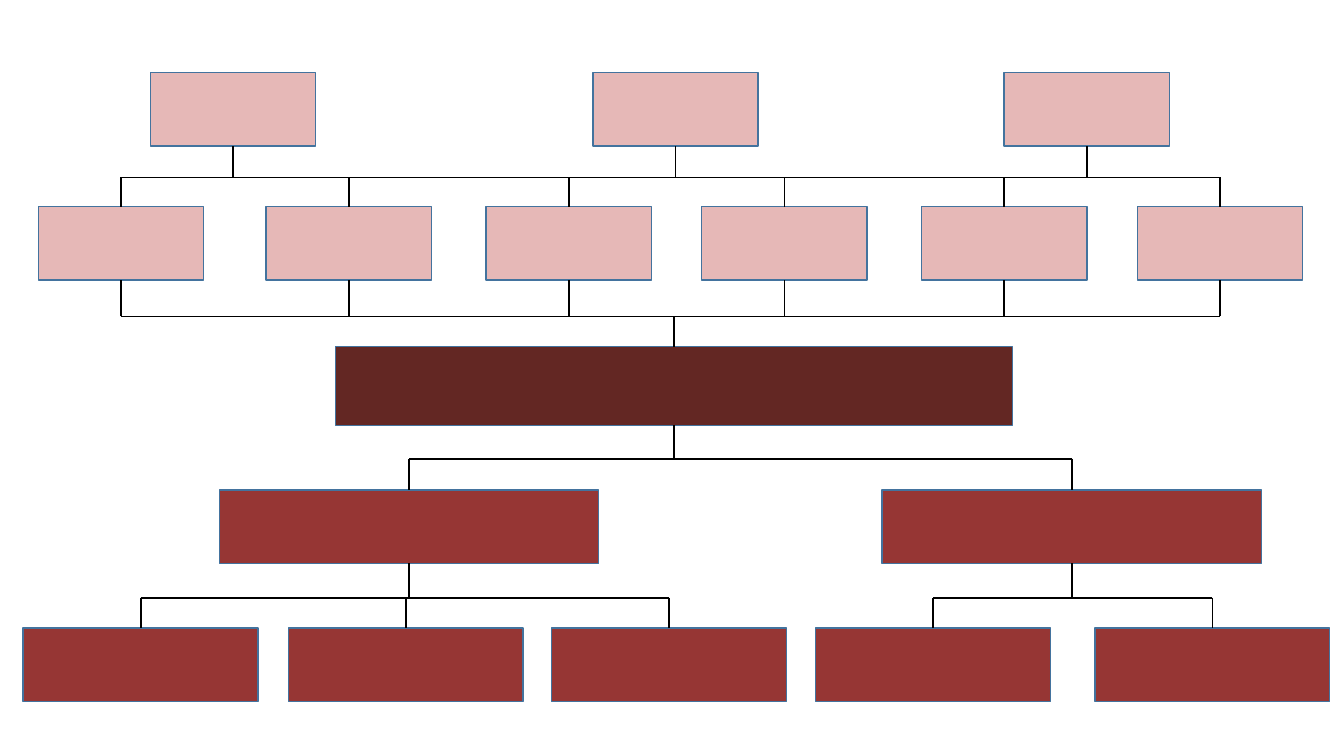
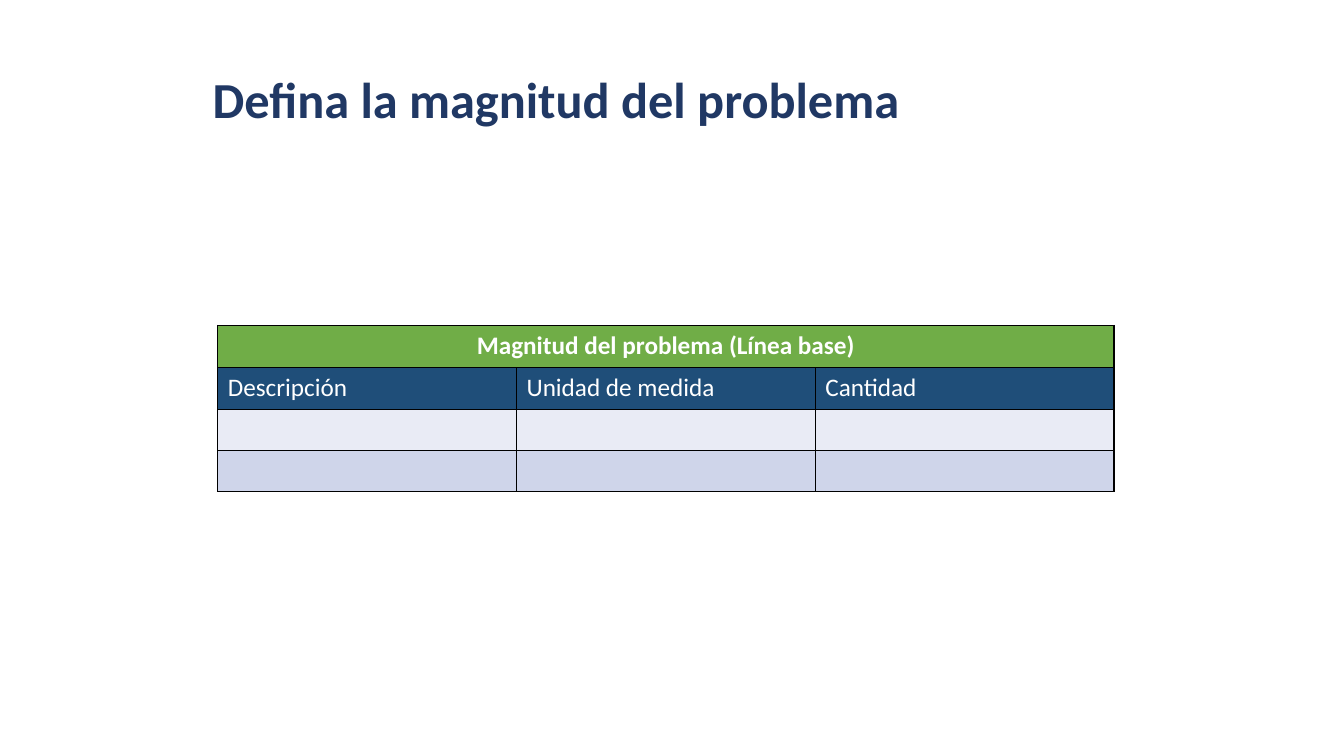
from lxml.etree import SubElement
from pptx import Presentation
from pptx.dml.color import RGBColor
from pptx.enum.shapes import MSO_CONNECTOR, MSO_SHAPE
from pptx.enum.text import PP_ALIGN
from pptx.oxml import parse_xml
from pptx.oxml.ns import nsdecls, qn
from pptx.util import Inches, Pt

BLACK = RGBColor(0x00, 0x00, 0x00)
WHITE = RGBColor(0xFF, 0xFF, 0xFF)
PINK = RGBColor(0xE6, 0xB8, 0xB7)
RED = RGBColor(0x96, 0x36, 0x34)
MAROON = RGBColor(0x63, 0x27, 0x23)
OUTLINE = RGBColor(0x43, 0x73, 0x9E)
NAVY = RGBColor(0x20, 0x38, 0x64)
GREEN = RGBColor(0x70, 0xAD, 0x47)
BLUE = RGBColor(0x1F, 0x4E, 0x79)
PALE = RGBColor(0xE9, 0xEB, 0xF5)
LILAC = RGBColor(0xCF, 0xD5, 0xEA)

FONT = "Calibri"
BOTTOM, TOP = 2, 0
UNIT = Inches(0.1)  # one column or row of the grid


def grid(*lengths):
    return [round(length * UNIT) for length in lengths]


class Deck:
    def __init__(self):
        self.prs = Presentation()
        self.prs.slide_width, self.prs.slide_height = Inches(13.33), Inches(7.5)
        self.slide = None

    def new_slide(self):
        self.slide = self.prs.slides.add_slide(self.prs.slide_layouts[6])

    def add_text(self, paragraph, text, size, color, bold=False):
        run = paragraph.add_run()
        run.text = text
        run.font.name, run.font.size, run.font.bold = FONT, Pt(size), bold
        run.font.color.rgb = color

    def title(self, text):
        frame = self.slide.shapes.add_textbox(*grid(20.1, 6.9, 91.1, 9.9)).text_frame
        frame.word_wrap = True
        frame.paragraphs[0].line_spacing = 0.9
        self.add_text(frame.paragraphs[0], text, 36, NAVY, bold=True)

    def level(self, centres, top, width, fill, height=7.3):
        """Draw a row of equal boxes, placed by their centre columns."""
        boxes = []
        for centre in centres:
            box = self.slide.shapes.add_shape(
                MSO_SHAPE.RECTANGLE, *grid(centre - width / 2, top, width, height))
            box.shadow.inherit = False
            box.fill.solid()
            box.fill.fore_color.rgb = fill
            box.line.color.rgb = OUTLINE
            box.line.width = Pt(1)
            boxes.append(box)
        return boxes

    def line(self, x1, y1, x2, y2):
        link = self.slide.shapes.add_connector(MSO_CONNECTOR.STRAIGHT, x1, y1, x2, y2)
        link.line.color.rgb = BLACK
        link.line.width = Pt(1.25)
        SubElement(link._element.spPr, qn("a:effectLst"))
        return link

    def join(self, upper, lower, row):
        """Link two levels of boxes through a horizontal line at the given row."""
        y, = grid(row)
        centres = [box.left + box.width // 2 for box in upper + lower]
        self.line(min(centres), y, max(centres), y)
        for box, x in zip(upper, centres):
            self.line(x, box.top + box.height, x, y).begin_connect(box, BOTTOM)
        for box, x in zip(lower, centres[len(upper):]):
            self.line(x, y, x, box.top).end_connect(box, TOP)

    def border(self, cell):
        props = cell._tc.get_or_add_tcPr()
        for index, side in enumerate("LRTB"):
            props.insert(index, parse_xml(
                f'<a:ln{side} {nsdecls("a")} w="{Pt(1)}"><a:solidFill>'
                f'<a:srgbClr val="{BLACK}"/></a:solidFill></a:ln{side}>'))

    def table(self, heading, labels, empty_fills):
        fills = [GREEN, BLUE, *empty_fills]
        table = self.slide.shapes.add_table(
            len(fills), len(labels), *grid(21.6, 32.3, 88.9, 16.5)).table
        table.first_row = table.horz_banding = False
        for row, fill, height in zip(table.rows, fills, grid(4.2, *[4.1] * 3)):
            row.height = height
            for cell in row.cells:
                cell.fill.solid()
                cell.fill.fore_color.rgb = fill
                self.border(cell)
        banner = table.cell(0, 0)
        banner.merge(table.cell(0, len(labels) - 1))
        paragraph = banner.text_frame.paragraphs[0]
        paragraph.alignment = PP_ALIGN.CENTER
        self.add_text(paragraph, heading, 18, WHITE, bold=True)
        for cell, label in zip(table.rows[1].cells, labels):
            self.add_text(cell.text_frame.paragraphs[0], label, 18, WHITE)


def problem_tree(deck):
    deck.new_slide()
    far_effects = deck.level([23.1, 67, 107.8], 7.2, 16.4, PINK)
    effects = deck.level([12, 34.6, 56.4, 77.8, 99.6, 121], 20.5, 16.4, PINK)
    problem = deck.level([66.85], 34.4, 67.1, MAROON, height=7.8)
    causes = deck.level([40.6, 106.3], 48.6, 37.6, RED)
    roots = deck.level([13.95, 40.25, 66.35, 92.55, 120.25], 62.3, 23.3, RED)

    deck.join(far_effects, effects, 17.6)
    deck.join(effects, problem, 31.4)
    deck.join(problem, causes, 45.5)
    deck.join(causes[:1], roots[:3], 59.3)
    deck.join(causes[1:], roots[3:], 59.3)


def problem_size(deck):
    deck.new_slide()
    deck.table("Magnitud del problema (Línea base)",
               ["Descripción", "Unidad de medida", "Cantidad"], [PALE, LILAC])
    deck.title("Defina la magnitud del problema")


def main():
    deck = Deck()
    problem_tree(deck)
    problem_size(deck)
    deck.prs.save("out.pptx")


if __name__ == "__main__":
    main()
